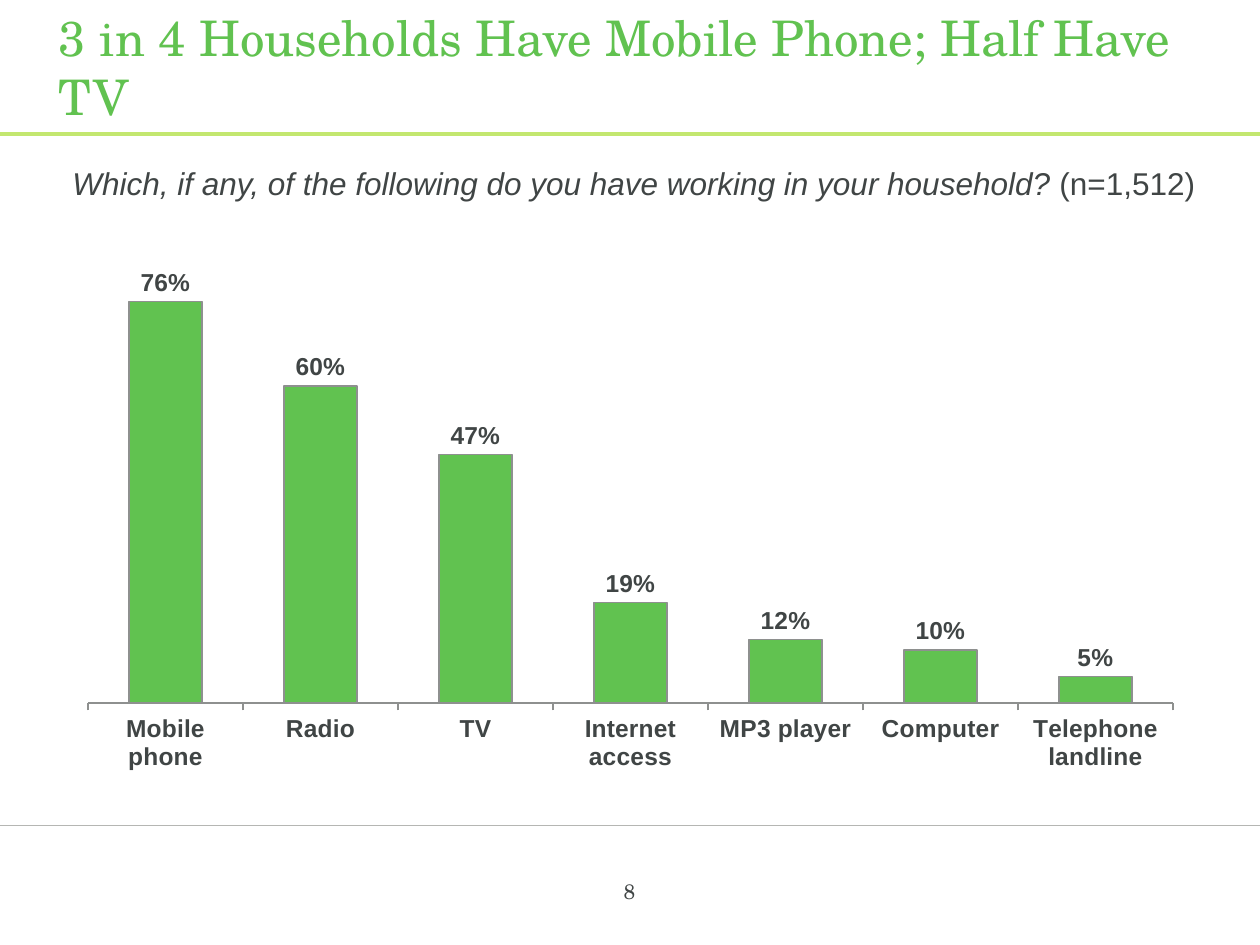
from lxml import etree
from pptx import Presentation
from pptx.chart.data import CategoryChartData
from pptx.dml.color import RGBColor
from pptx.enum import chart as ch, shapes, text
from pptx.oxml import parse_xml
from pptx.oxml.ns import nsdecls, qn
from pptx.util import Inches, Pt

GREEN, LIME, DARK, GRAY, RULE = "61C250", "C3E76F", "404545", "8E908F", "B5B6B3"
SERIF, SANS = "TeX Gyre Schola", "Arial"

TITLE = "3 in 4 Households Have Mobile Phone; Half Have TV"
QUESTION = "Which, if any, of the following do you have working in your household? "
SAMPLE = "(n=1,512)"
PAGE = "8"
OWNERSHIP = {
    "Mobile phone": 0.76,
    "Radio": 0.60,
    "TV": 0.47,
    "Internet access": 0.19,
    "MP3 player": 0.12,
    "Computer": 0.10,
    "Telephone landline": 0.05,
}
RULES = [(6.55, RULE, 0.25), (1.06, LIME, 2.25)]  # y, colour, width
PLOT = {"x": 0.021, "y": 0.091, "w": 0.959, "h": 0.771}  # shares of the chart


def rgb(color):
    return RGBColor.from_string(color)


def set_font(font, name, size, color, bold=False):
    font.name, font.size, font.bold = name, Pt(size), bold
    font.color.rgb = rgb(color)


def add_rule(slide, y, color, width):
    line = slide.shapes.add_connector(
        shapes.MSO_CONNECTOR.STRAIGHT, 0, Inches(y), Inches(10), Inches(y))
    line.line.color.rgb = rgb(color)
    line.line.width = Pt(width)
    etree.SubElement(line._element.spPr, qn("a:effectLst"))


def add_text(slide, box, runs, font, size, color,
             align=text.PP_ALIGN.CENTER, anchor=text.MSO_ANCHOR.TOP):
    """Add one paragraph; runs are (text, italic) pairs."""
    tf = slide.shapes.add_textbox(*map(Inches, box)).text_frame
    tf.word_wrap = True
    tf.vertical_anchor = anchor
    p = tf.paragraphs[0]
    p.alignment = align
    set_font(p.font, font, size, color)
    for words, italic in runs:
        r = p.add_run()
        r.text = words
        r.font.italic = italic


def set_plot_area(chart):
    """Fix the inner plot area, given as shares of the chart's size."""
    modes = "".join(f'<c:{k}Mode val="edge"/>' for k in "xy")
    sizes = "".join(f'<c:{k} val="{v}"/>' for k, v in PLOT.items())
    layout = parse_xml(
        f'<c:layout {nsdecls("c")}><c:manualLayout><c:layoutTarget val="inner"/>'
        f"{modes}{sizes}</c:manualLayout></c:layout>")
    area = chart._chartSpace.chart.plotArea
    for old in area.findall(qn("c:layout")):
        area.remove(old)
    area.insert(0, layout)


def add_ownership_chart(slide, box):
    data = CategoryChartData(number_format="0%")
    data.categories = list(OWNERSHIP)
    data.add_series("Series 1", list(OWNERSHIP.values()))
    chart = slide.shapes.add_chart(
        ch.XL_CHART_TYPE.COLUMN_CLUSTERED, *map(Inches, box), data).chart
    chart.has_legend = chart.has_title = False
    set_font(chart.font, SANS, 10, DARK)
    set_plot_area(chart)

    values = chart.value_axis
    values.minimum_scale, values.maximum_scale = 0, 0.8
    values.has_major_gridlines = False
    values.visible = False

    cats = chart.category_axis
    cats.major_tick_mark = ch.XL_TICK_MARK.OUTSIDE
    cats.format.line.color.rgb = rgb(GRAY)
    cats.format.line.width = Pt(0.75)
    set_font(cats.tick_labels.font, SANS, 14, DARK, bold=True)

    plot = chart.plots[0]
    plot.gap_width = 112
    plot.vary_by_categories = False
    bars = plot.series[0].format
    bars.fill.solid()
    bars.fill.fore_color.rgb = rgb(GREEN)
    bars.line.color.rgb = rgb(GRAY)
    bars.line.width = Pt(0.75)

    plot.has_data_labels = True
    labels = plot.data_labels
    labels.show_value = True
    labels.number_format, labels.number_format_is_linked = "0%", False
    labels.position = ch.XL_LABEL_POSITION.OUTSIDE_END
    set_font(labels.font, SANS, 14, DARK, bold=True)


def main():
    prs = Presentation()
    prs.slide_width, prs.slide_height = Inches(10), Inches(7.5)
    slide = prs.slides.add_slide(prs.slide_layouts[6])
    for rule in RULES:
        add_rule(slide, *rule)
    add_text(slide, (0.37, 0.21, 9.36, 0.64), [(TITLE, False)], SERIF, 28, GREEN,
             text.PP_ALIGN.LEFT, text.MSO_ANCHOR.MIDDLE)
    add_text(slide, (0.37, 1.25, 9.32, 0.5), [(QUESTION, True), (SAMPLE, False)],
             SANS, 18, DARK)
    add_text(slide, (3.83, 6.92, 2.33, 0.52), [(PAGE, False)], SERIF, 12, DARK)
    add_ownership_chart(slide, (0.51, 1.83, 8.98, 4.35))
    prs.save("out.pptx")


if __name__ == "__main__":
    main()
